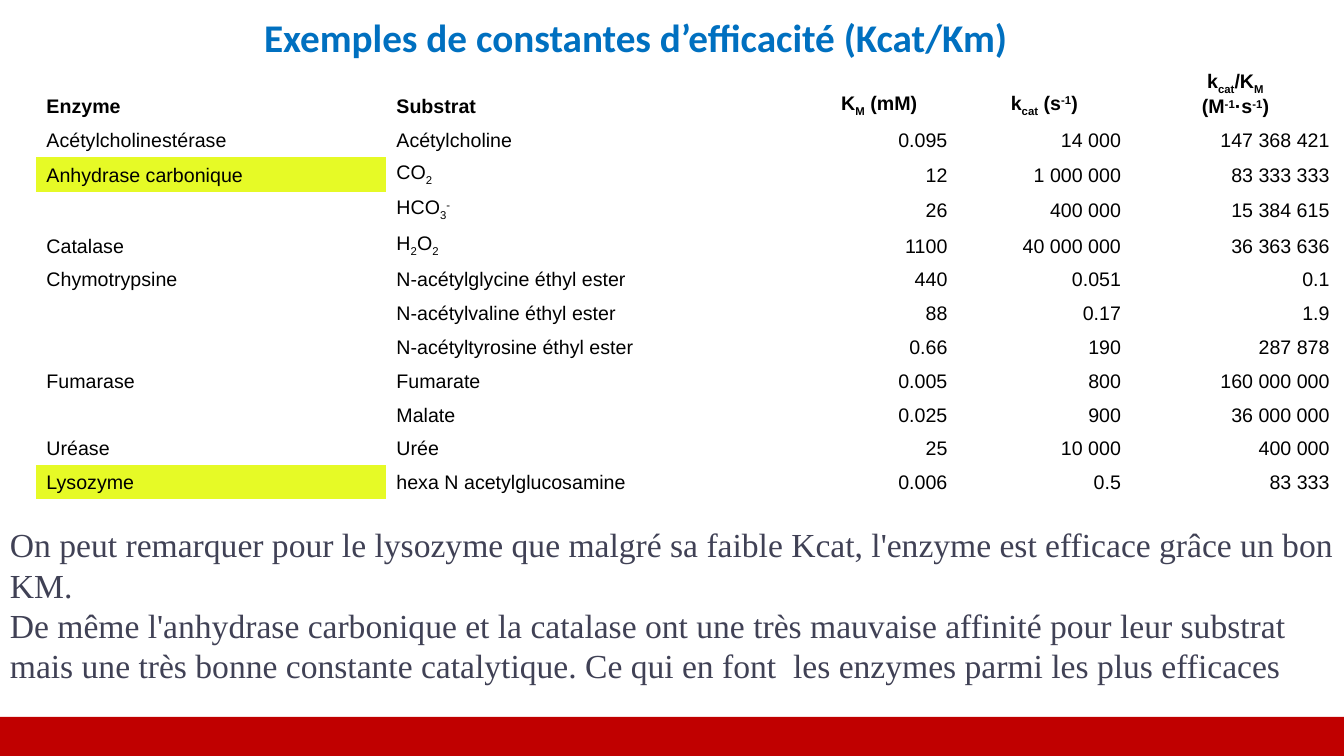
from pptx import Presentation
from pptx.dml.color import RGBColor
from pptx.enum import shapes, text
from pptx.util import Pt

BLACK = RGBColor(0x00, 0x00, 0x00)
BLUE = RGBColor(0x00, 0x70, 0xC0)
RED = RGBColor(0xC0, 0x00, 0x00)
SLATE = RGBColor(0x40, 0x41, 0x55)
YELLOW = RGBColor(0xE6, 0xFA, 0x26)
NO_TABLE_STYLE = "{2D5ABB26-0587-4C30-8999-92F81FD0307C}"
BASELINES = {"_": "-25000", "^": "30000"}
COLUMN_WIDTHS = [250, 296, 112, 124, 149]
HEADER_HEIGHT, ROW_HEIGHT = 41, 24
HIGHLIGHTED = {"Anhydrase carbonique", "Lysozyme"}
TITLE = "Exemples de constantes d’efficacité (Kcat/Km)"
COMMENTS = (
    "On peut remarquer pour le lysozyme que malgré sa faible Kcat, "
    "l'enzyme est efficace grâce un bon KM.\n"
    "De même l'anhydrase carbonique et la catalase ont une très mauvaise affinité "
    "pour leur substrat mais une très bonne constante catalytique. "
    "Ce qui en font  les enzymes parmi les plus efficaces"
)
ENZYMES = [
    ["Enzyme", "Substrat", "K|_M| (mM)", "k|_cat| (s|^-1|)", "k|_cat|/K|_M\n(M|^-1|·s|^-1|)"],
    ["Acétylcholinestérase", "Acétylcholine", "0.095", "14 000", "147 368 421"],
    ["Anhydrase carbonique", "CO|_2", "12", "1 000 000", "83 333 333"],
    ["", "HCO|_3|^-", "26", "400 000", "15 384 615"],
    ["Catalase", "H|_2|O|_2", "1100", "40 000 000", "36 363 636"],
    ["Chymotrypsine", "N-acétylglycine éthyl ester", "440", "0.051", "0.1"],
    ["", "N-acétylvaline éthyl ester", "88", "0.17", "1.9"],
    ["", "N-acétyltyrosine éthyl ester", "0.66", "190", "287 878"],
    ["Fumarase", "Fumarate", "0.005", "800", "160 000 000"],
    ["", "Malate", "0.025", "900", "36 000 000"],
    ["Uréase", "Urée", "25", "10 000", "400 000"],
    ["Lysozyme", "hexa N acetylglucosamine", "0.006", "0.5", "83 333"],
]


def write_text(frame, content, size, font, color, bold=False, align=text.PP_ALIGN.LEFT):
    """Write lines whose |-separated pieces starting with _ or ^ are sub- or superscripts."""
    for index, line in enumerate(content.split("\n")):
        paragraph = frame.add_paragraph() if index else frame.paragraphs[0]
        paragraph.alignment = align
        if not line:
            paragraph._p.get_or_add_endParaRPr().set("sz", str(size * 100))
            continue
        for piece in line.split("|"):
            run = paragraph.add_run()
            baseline = BASELINES.get(piece[0])
            run.text = piece[1:] if baseline else piece
            run.font.size = Pt(size)
            run.font.name = font
            run.font.bold = bold
            run.font.color.rgb = color
            if baseline:
                run._r.get_or_add_rPr().set("baseline", baseline)


def add_text(slide, content, left, top, width, height, **style):
    """Add a wrapping text box."""
    box = slide.shapes.add_textbox(Pt(left), Pt(top), Pt(width), Pt(height))
    box.text_frame.word_wrap = True
    write_text(box.text_frame, content, **style)


def add_bar(slide, left, top, width, height, color):
    """Add a plain filled rectangle."""
    bar = slide.shapes.add_shape(
        shapes.MSO_SHAPE.RECTANGLE, Pt(left), Pt(top), Pt(width), Pt(height))
    bar.shadow.inherit = False
    bar.fill.solid()
    bar.fill.fore_color.rgb = color
    bar.line.fill.background()


def fill_cell(cell, content, is_header, is_number):
    """Write one table cell and highlight it if its enzyme is singled out."""
    cell.vertical_anchor = text.MSO_ANCHOR.BOTTOM
    if content in HIGHLIGHTED:
        cell.fill.solid()
        cell.fill.fore_color.rgb = YELLOW
    else:
        cell.fill.background()
    align = text.PP_ALIGN.LEFT
    if is_number:
        align = text.PP_ALIGN.CENTER if is_header else text.PP_ALIGN.RIGHT
    write_text(cell.text_frame, content, size=14, font="Arial", color=BLACK,
               bold=is_header, align=align)


def add_enzyme_table(slide, left, top):
    """Add the table of kinetic constants."""
    heights = [HEADER_HEIGHT] + [ROW_HEIGHT] * (len(ENZYMES) - 1)
    table = slide.shapes.add_table(
        len(ENZYMES), len(COLUMN_WIDTHS), Pt(left), Pt(top),
        Pt(sum(COLUMN_WIDTHS)), Pt(sum(heights))).table
    table.first_row = table.horz_banding = False
    table._tbl.tblPr[0].text = NO_TABLE_STYLE
    for column, width in zip(table.columns, COLUMN_WIDTHS):
        column.width = Pt(width)
    for row_index, (values, height) in enumerate(zip(ENZYMES, heights)):
        table.rows[row_index].height = Pt(height)
        for column_index, value in enumerate(values):
            fill_cell(table.cell(row_index, column_index), value,
                      is_header=row_index == 0, is_number=column_index >= 2)


def main():
    """Build the slide on enzyme efficiency constants."""
    presentation = Presentation()
    presentation.slide_width, presentation.slide_height = Pt(960), Pt(540)
    slide = presentation.slides.add_slide(presentation.slide_layouts[6])
    add_bar(slide, 0, 512, 960, 28, RED)
    add_enzyme_table(slide, 26, 47)
    add_text(slide, TITLE, 181.5, 6, 716, 41, size=28, font="Calibri", color=BLUE, bold=True)
    add_text(slide, COMMENTS, 0, 371, 960, 124, size=24, font="Times New Roman", color=SLATE)
    presentation.save("out.pptx")


if __name__ == "__main__":
    main()
